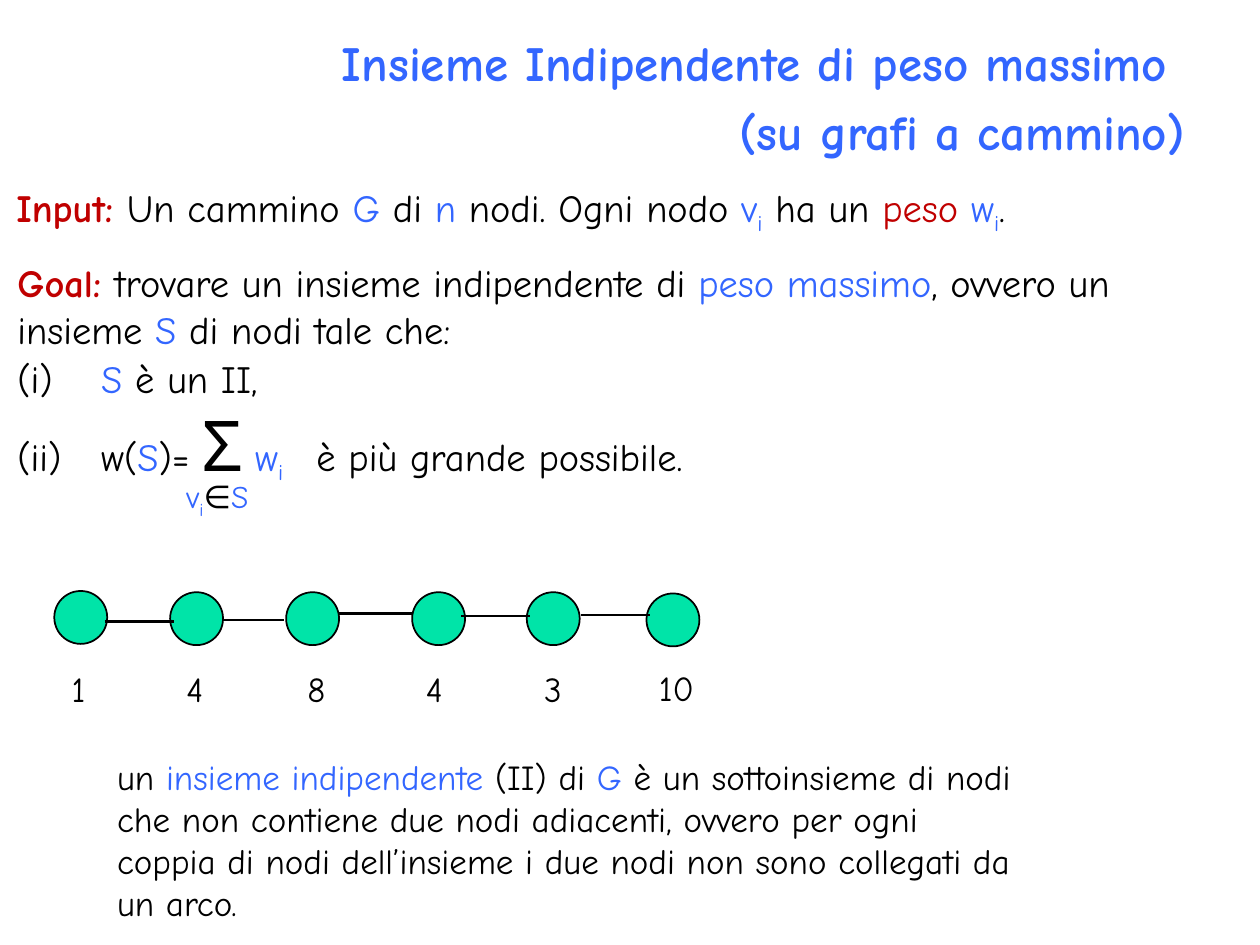
from dataclasses import dataclass
from typing import NamedTuple

from lxml.etree import SubElement
from pptx import Presentation
from pptx.dml.color import RGBColor
from pptx.enum.shapes import MSO_CONNECTOR, MSO_SHAPE
from pptx.enum.text import PP_ALIGN
from pptx.oxml.ns import qn
from pptx.util import Pt


@dataclass(frozen=True)
class Theme:
    """Fonts, colours and type sizes of the slide."""
    font: str = "Comic Neue"
    blue: RGBColor = RGBColor(0x33, 0x66, 0xFF)
    red: RGBColor = RGBColor(0xC0, 0x00, 0x00)
    black: RGBColor = RGBColor(0x00, 0x00, 0x00)
    green: RGBColor = RGBColor(0x00, 0xE4, 0xA8)
    title: int = 28
    body: int = 22
    note: int = 20
    index: int = 18
    sigma: int = 40


class Box(NamedTuple):
    """Left, top, width and height in points."""
    left: float
    top: float
    width: float
    height: float


class Node(NamedTuple):
    """A weighted node and its offset inside the graph box."""
    weight: str
    left: float
    top: float
    label_left: float
    label_top: float


class Edge(NamedTuple):
    """A horizontal edge inside the graph box."""
    start: float
    end: float
    height: float


THEME = Theme()
NODE_SIZE = 30.24
NODES = [
    Node("1", 0, 0, 2.9, 40.3),
    Node("4", 66.2, 0.7, 68.4, 40.3),
    Node("8", 132.5, 0.7, 137.5, 40.3),
    Node("4", 204.5, 0.7, 205.2, 40.3),
    Node("3", 270, 0.7, 272.8, 40.3),
    Node("10", 338.4, 1.4, 338.4, 39.6),
]
EDGES = [
    Edge(28.8, 68.4, 17.3),
    Edge(97.2, 131, 16.5),
    Edge(162, 204.5, 13),
    Edge(232.5, 272.1, 14.4),
    Edge(301, 340.6, 13.7),
]


def add_text_frame(slide, box):
    """Add a wrapping text box and return its text frame."""
    shape = slide.shapes.add_textbox(*(Pt(length) for length in box))
    shape.text_frame.word_wrap = True
    return shape.text_frame


def add_run(paragraph, text, size, color=THEME.black, bold=False, subscript=False):
    """Append one formatted run."""
    run = paragraph.add_run()
    run.text = text
    font = run.font
    font.name, font.size, font.bold = THEME.font, Pt(size), bold
    font.color.rgb = color
    if subscript:
        run._r.get_or_add_rPr().set("baseline", "-25000")


def add_variable(paragraph, letter, size, index="i"):
    """Append a blue letter with its subscript."""
    add_run(paragraph, letter, size, THEME.blue)
    add_run(paragraph, index, size, THEME.blue, subscript=True)


def add_condition(frame):
    """Add a paragraph numbered with roman numerals in parentheses."""
    paragraph = frame.add_paragraph()
    paragraph.line_spacing = 0.9
    paragraph.space_before = Pt(5)
    properties = paragraph._p.get_or_add_pPr()
    properties.set("marL", str(Pt(40.5)))
    properties.set("indent", str(-Pt(40.5)))
    SubElement(properties, qn("a:buFont"), typeface=THEME.font)
    SubElement(properties, qn("a:buAutoNum"), type="romanLcParenBoth")
    return paragraph


def draw_title(slide, box):
    """Write the two right-aligned title lines."""
    frame = add_text_frame(slide, box)
    lines = ["Insieme Indipendente di peso massimo ", "(su grafi a cammino)"]
    for number, line in enumerate(lines):
        paragraph = frame.add_paragraph() if number else frame.paragraphs[0]
        paragraph.alignment = PP_ALIGN.RIGHT
        paragraph.space_before = Pt(6)
        add_run(paragraph, line, THEME.title, THEME.blue, bold=True)


def draw_input(slide, box):
    """Write the statement of the input."""
    paragraph = add_text_frame(slide, box).paragraphs[0]
    size = THEME.body
    add_run(paragraph, "Input: ", size, THEME.red, bold=True)
    add_run(paragraph, "Un cammino ", size)
    add_run(paragraph, "G", size, THEME.blue)
    add_run(paragraph, " di ", size)
    add_run(paragraph, "n", size, THEME.blue)
    add_run(paragraph, " nodi. Ogni nodo ", size)
    add_variable(paragraph, "v", size)
    add_run(paragraph, " ha un ", size)
    add_run(paragraph, "peso ", size, THEME.red)
    add_variable(paragraph, "w", size)
    add_run(paragraph, ".", size)


def draw_goal(slide, box):
    """Write the goal with its two numbered conditions."""
    frame = add_text_frame(slide, box)
    size = THEME.body
    goal = frame.paragraphs[0]
    add_run(goal, "Goal: ", size, THEME.red, bold=True)
    add_run(goal, "trovare un insieme indipendente di ", size)
    add_run(goal, "peso massimo", size, THEME.blue)
    add_run(goal, ", ovvero un insieme ", size)
    add_run(goal, "S", size, THEME.blue)
    add_run(goal, " di nodi tale che:", size)

    independence = add_condition(frame)
    add_run(independence, " ", size)
    add_run(independence, "S", size, THEME.blue)
    add_run(independence, " è un II,", size)

    weight = add_condition(frame)
    add_run(weight, " w(", size)
    add_run(weight, "S", size, THEME.blue)
    add_run(weight, ")= ", size)
    add_run(weight, "Σ", THEME.sigma)
    add_variable(weight, " w", size, "i ")
    add_run(weight, "  è più grande possibile.", size)


def draw_sum_index(slide, box):
    """Write the index set below the summation sign."""
    paragraph = add_text_frame(slide, box).paragraphs[0]
    add_variable(paragraph, "v", THEME.index)
    add_run(paragraph, "∈", THEME.index)
    add_run(paragraph, "S", THEME.index, THEME.blue)


def draw_path_graph(slide, box):
    """Draw the path graph with the weight below each node."""
    for node in NODES:
        circle = slide.shapes.add_shape(
            MSO_SHAPE.OVAL, Pt(box.left + node.left), Pt(box.top + node.top),
            Pt(NODE_SIZE), Pt(NODE_SIZE))
        circle.shadow.inherit = False
        circle.fill.solid()
        circle.fill.fore_color.rgb = THEME.green
        circle.line.color.rgb = THEME.black
        circle.line.width = Pt(1)
        label_box = Box(box.left + node.label_left, box.top + node.label_top,
                        22.3 if len(node.weight) == 1 else 49.7, 31.7)
        label = add_text_frame(slide, label_box).paragraphs[0]
        add_run(label, node.weight, THEME.note)
    for edge in EDGES:
        height = Pt(box.top + edge.height)
        line = slide.shapes.add_connector(
            MSO_CONNECTOR.STRAIGHT, Pt(box.left + edge.start), height,
            Pt(box.left + edge.end), height)
        line.line.color.rgb = THEME.black
        line.line.width = Pt(1.5)
        SubElement(line._element.spPr, qn("a:effectLst"))


def draw_definition(slide, box):
    """Write the definition of an independent set."""
    paragraph = add_text_frame(slide, box).paragraphs[0]
    size = THEME.note
    add_run(paragraph, "un ", size)
    add_run(paragraph, "insieme indipendente", size, THEME.blue)
    add_run(paragraph, " (II) di ", size)
    add_run(paragraph, "G", size, THEME.blue)
    add_run(paragraph, " è un sottoinsieme di nodi che non contiene due nodi adiacenti, "
            "ovvero per ogni coppia di nodi dell’insieme i due nodi non sono "
            "collegati da un arco.", size)


def main():
    """Build and save the slide."""
    presentation = Presentation()
    presentation.slide_width, presentation.slide_height = Pt(720), Pt(540)
    slide = presentation.slides.add_slide(presentation.slide_layouts[6])
    draw_title(slide, Box(36, 15.1, 648, 72))
    draw_input(slide, Box(2.2, 101.5, 706.3, 33.9))
    draw_goal(slide, Box(2.9, 144.7, 692, 128.9))
    draw_definition(slide, Box(59.8, 428.4, 532.8, 104.4))
    draw_sum_index(slide, Box(99.4, 269.3, 67.7, 28.8))
    draw_path_graph(slide, Box(31, 337.7, 368.6, 72))
    presentation.save("out.pptx")


if __name__ == "__main__":
    main()
